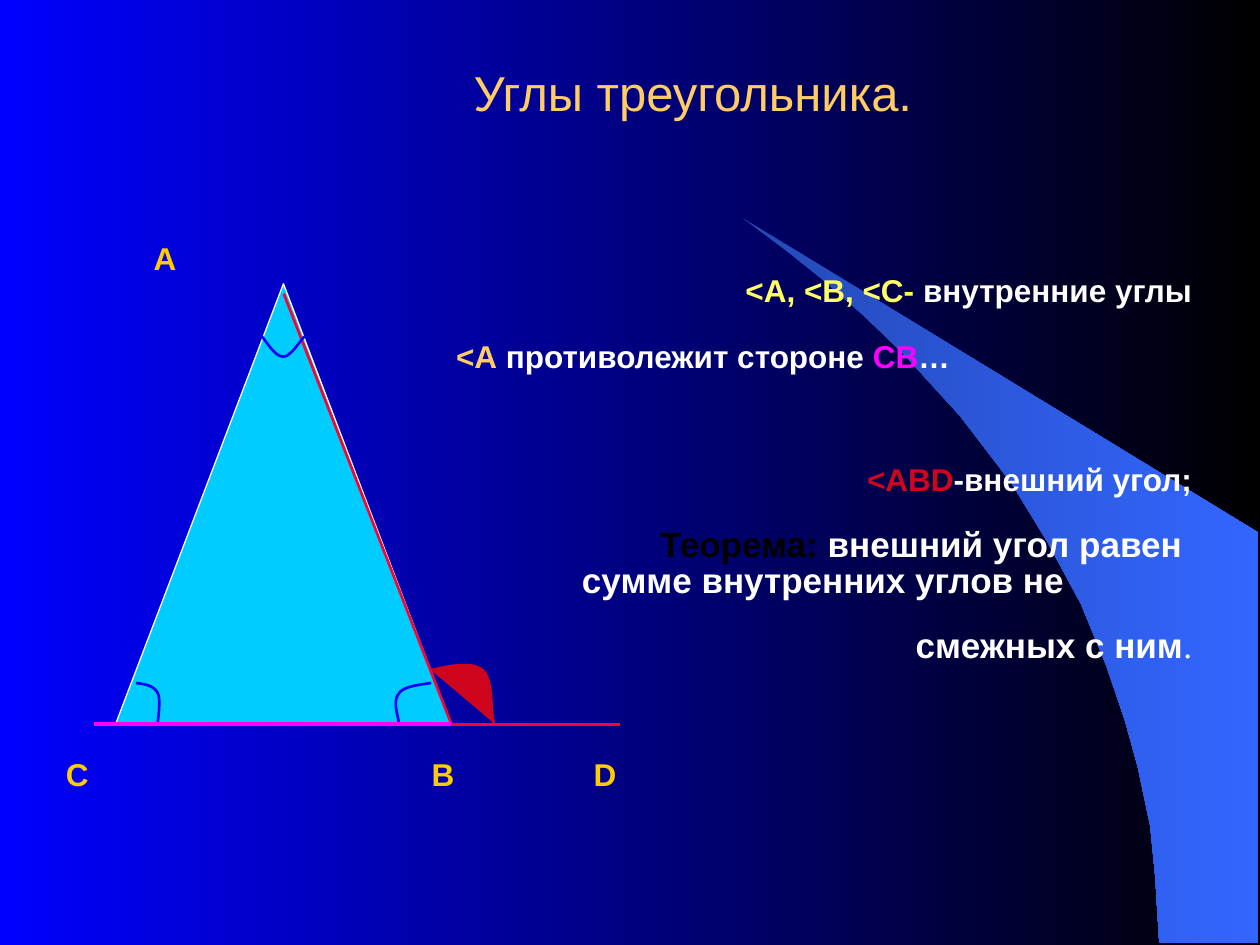
"""Build a slide about the interior and exterior angles of a triangle."""
import pptx
import pptx.dml.color
import pptx.enum.shapes
import pptx.enum.text
import pptx.oxml
import pptx.util
from pptx.util import Cm

WHITE, GOLD, SAND, RED = "FFFFFF", "FFCC00", "FFCC66", "CF051D"
BLUE, CYAN, MAGENTA, CRIMSON = "0000FF", "00CCFF", "FF00FF", "FF0033"

TITLE = ("Углы треугольника.", 9.55, 1.85)
VERTEX_LABELS = [("А", 3.1, 5.2), ("С", 1.33, 15.6), ("В", 8.7, 15.6), ("D", 11.97, 15.6)]
STATEMENTS = [
    (24.03, 5.85, 18, [("<А, <В, <С-", "FFFF66"), (" внутренние углы", WHITE)]),
    (19.15, 7.18, 18, [("<А", SAND), (" противолежит стороне ", WHITE),
                       ("СВ", MAGENTA), ("…", WHITE)]),
    (24.03, 9.66, 18, [("<АВD", RED), ("-внешний угол;", WHITE)]),
    (23.83, 10.95, 20, [("Теорема:", "000000"), (" внешний угол равен", WHITE)]),
    (21.45, 11.69, 20, [("сумме внутренних углов не", WHITE)]),
    (24.03, 13, 20, [("смежных с ним", WHITE), (".", WHITE, "Times New Roman", False)]),
]

BASE_Y = 14.6
APEX, LEFT, RIGHT = (5.72, 5.72), (2.33, BASE_Y), (9.1, BASE_Y)
RAY_END, BASE_START = (12.5, BASE_Y), (1.9, BASE_Y)

CRESCENT = [
    (23.37, 19), (25.37, 19.02), (25.37, 10.74), (14.96, 4.39), (15.85, 5.05),
    (16.59, 5.64), (17.4, 6.35), (18.19, 7.11), (19.35, 8.38), (20.4, 9.75),
    (21.13, 10.95), (21.79, 12.17), (22.3, 13.41), (22.68, 14.53),
    (22.94, 15.47), (23.19, 16.66), (23.29, 17.68),
]
EXTERIOR_ANGLE = [(8.69, 13.51), (9.1, 13.41), (9.53, 13.34), (9.73, 13.51),
                  (9.96, 13.69), (9.88, 14.43), (9.96, 14.58)]
INTERIOR_ANGLES = [
    [(5.28, 6.78), (5.44, 6.99), (5.56, 7.19), (5.72, 7.19),
     (5.87, 7.19), (6.07, 6.83), (6.15, 6.78)],
    [(2.74, 13.77), (2.92, 13.79), (3.1, 13.82), (3.18, 13.97),
     (3.25, 14.12), (3.18, 14.5), (3.18, 14.6)],
    [(8.05, 14.6), (8, 14.35), (7.92, 14.12), (8.05, 13.97),
     (8.15, 13.82), (8.58, 13.79), (8.69, 13.77)],
]


def color(value):
    return pptx.dml.color.RGBColor.from_string(value)


def set_gradient(fill, *values):
    fill.gradient()
    fill.gradient_angle = 0
    for stop, value in zip(fill.gradient_stops, values):
        stop.color.rgb = color(value)


def set_style(shape, fill=None, line=None, width=1.5):
    shape.shadow.inherit = False
    if fill:
        shape.fill.solid()
        shape.fill.fore_color.rgb = color(fill)
    else:
        shape.fill.background()
    if line:
        shape.line.color.rgb = color(line)
        shape.line.width = pptx.util.Pt(width)
    else:
        shape.line.fill.background()


def add_text(slide, runs, x, y, *, size, bold=True, font="Arial", right=False):
    width, height = 15, 1.4
    left = x - width if right else x
    shape = slide.shapes.add_textbox(Cm(left), Cm(y - height / 2), Cm(width), Cm(height))
    frame = shape.text_frame
    frame.word_wrap = True
    frame.vertical_anchor = pptx.enum.text.MSO_ANCHOR.MIDDLE
    frame.margin_left = frame.margin_right = frame.margin_top = frame.margin_bottom = 0
    paragraph = frame.paragraphs[0]
    alignment = pptx.enum.text.PP_ALIGN
    paragraph.alignment = alignment.RIGHT if right else alignment.LEFT
    for text, value, *special in runs:
        run = paragraph.add_run()
        run.text = text
        run.font.name, run.font.bold = special or (font, bold)
        run.font.size = pptx.util.Pt(size)
        run.font.color.rgb = color(value)


def add_outline(slide, points, close=False, **style):
    points = [(Cm(x), Cm(y)) for x, y in points]
    builder = slide.shapes.build_freeform(*points[0])
    builder.add_line_segments(points[1:], close=close)
    shape = builder.convert_to_shape()
    set_style(shape, **style)
    return shape


def trace_curve(points, steps=12):
    traced = [points[0]]
    for first in range(0, len(points) - 1, 3):
        for step in range(1, steps + 1):
            t = step / steps
            weights = ((1 - t) ** 3, 3 * t * (1 - t) ** 2, 3 * t * t * (1 - t), t ** 3)
            controls = points[first:first + 4]
            traced.append(tuple(sum(weight * point[axis] for weight, point in zip(weights, controls))
                                for axis in (0, 1)))
    return traced


def add_line(slide, start, end, value, width=1.5):
    connector = slide.shapes.add_connector(
        pptx.enum.shapes.MSO_CONNECTOR.STRAIGHT, *map(Cm, start + end))
    connector.line.color.rgb = color(value)
    connector.line.width = pptx.util.Pt(width)
    properties = connector.element.spPr
    properties.append(pptx.oxml.parse_xml(
        '<a:effectLst xmlns:a="http://schemas.openxmlformats.org/drawingml/2006/main"/>'))


def main():
    presentation = pptx.Presentation()
    presentation.slide_width, presentation.slide_height = Cm(25.4), Cm(19.05)
    slide = presentation.slides.add_slide(presentation.slide_layouts[6])
    set_gradient(slide.background.fill, BLUE, "000000")
    crescent = add_outline(slide, CRESCENT, close=True)
    set_gradient(crescent.fill, "2449B6", "3366FF")

    title, x, y = TITLE
    add_text(slide, [(title, SAND)], x, y, size=28, bold=False)
    for label, x, y in VERTEX_LABELS:
        add_text(slide, [(label, GOLD)], x, y, size=18)
    for x, y, size, runs in STATEMENTS:
        add_text(slide, runs, x, y, size=size, right=True)

    triangle = slide.shapes.add_shape(
        pptx.enum.shapes.MSO_SHAPE.ISOSCELES_TRIANGLE, Cm(LEFT[0]), Cm(APEX[1]),
        Cm(RIGHT[0] - LEFT[0]), Cm(BASE_Y - APEX[1]))
    set_style(triangle, fill=CYAN, line=WHITE, width=0.75)
    add_line(slide, (9.31, BASE_Y), RAY_END, WHITE)
    add_outline(slide, trace_curve(EXTERIOR_ANGLE), fill=RED, line=RED)
    add_line(slide, (APEX[0], 5.92), RIGHT, CRIMSON)
    add_line(slide, RIGHT, RAY_END, CRIMSON)
    for angle in INTERIOR_ANGLES:
        add_outline(slide, trace_curve(angle), line=BLUE)
    add_line(slide, RIGHT, BASE_START, MAGENTA, width=2.25)
    presentation.save("out.pptx")


if __name__ == "__main__":
    main()
